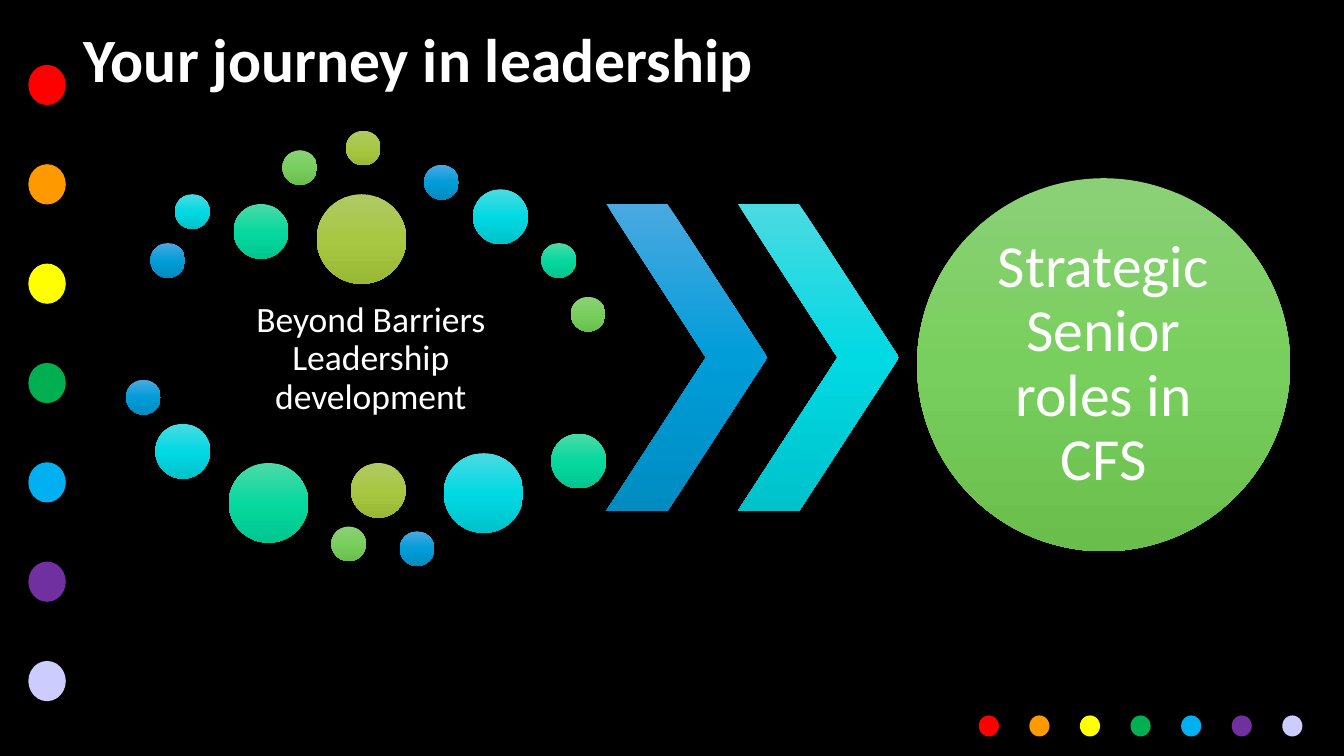
from copy import deepcopy
from dataclasses import dataclass

from pptx import Presentation
from pptx.dml.color import RGBColor
from pptx.enum.shapes import MSO_SHAPE as Shape
from pptx.enum.text import MSO_ANCHOR as Anchor, PP_ALIGN as Align
from pptx.util import Inches, Pt

TITLE = "Your journey in leadership"
PROGRAMME = "Beyond Barriers Leadership development"
DESTINATION = "Strategic Senior roles in CFS"

SLIDE_SIZE = (14.7, 8.27)
GRID_COLUMNS = 275

TITLE_BOX = (15.34, 0, 237.23, 25.44)
PROGRAMME_BOX = (46.77, 58.75, 58.19, 29.56)
DESTINATION_BOX = (187.65, 36.48, 76.33, 76.33)
CHEVRON_BOX = (124.04, 41.72, 32.93, 62.86)
CHEVRON_PITCH = 26.94
CHEVRON_DEPTH = 0.62
SIDE_DOT = (5.8, 13.28, 7.67, 8.23)
SIDE_PITCH = 20.33
FOOTER_DOT = (200.18, 146.5, 4.3, 4.12)
FOOTER_PITCH = 10.35

ORBIT_ORIGIN = (25.8, 26.75)
DIAMETERS = {"S": 7.1, "M": 11.2, "L": 16.3, "XL": 18.35}
ORBIT_DOTS = [
    (5, 23, "S"), (10, 13, "S"), (22, 15, "M"), (32, 4, "S"), (45, 0, "S"),
    (61, 7, "S"), (71, 12, "M"), (85, 23, "S"), (91, 34, "S"), (39, 13, "XL"),
    (0, 51, "S"), (6, 60, "M"), (21, 68, "L"), (42, 81, "S"), (46, 68, "M"),
    (56, 82, "S"), (65, 66, "L"), (87, 62, "M"),
]


@dataclass(frozen=True)
class Theme:
    font: str = "Calibri"
    background: str = "000000"
    text: str = "FFFFFF"
    title_size: float = 48.5
    programme_size: float = 28
    destination_size: float = 47
    rainbow: tuple = ("FF0000", "FF9900", "FFFF00", "00B050", "00B0F0", "7030A0", "CCCCFF")
    blue: tuple = ("4BA8E0", "009DD9", "008CC1")
    cyan: tuple = ("4BDAE2", "01D9E3", "00C2CB")
    teal: tuple = ("4CD9A7", "06D99F", "00C690")
    green: tuple = ("8BD077", "79CF5D", "69BE4C")
    lime: tuple = ("AFC964", "A8C843", "99B935")


THEME = Theme()
ORBIT_COLOURS = (THEME.blue, THEME.cyan, THEME.teal, THEME.green, THEME.lime)


def grid(*modules):
    return [Inches(module * SLIDE_SIZE[0] / GRID_COLUMNS) for module in modules]


def paint_gradient(shape, colours):
    shape.fill.gradient()
    shape.fill.gradient_angle = 270
    first_stop = shape.element.xpath(".//a:gs")[0]
    first_stop.addnext(deepcopy(first_stop))
    for stop, position, colour in zip(shape.fill.gradient_stops, (0, 0.5, 1), colours):
        stop.position = position
        stop.color.rgb = RGBColor.from_string(colour)


def add_figure(slide, kind, box, colour):
    shape = slide.shapes.add_shape(kind, *grid(*box))
    shape.shadow.inherit = False
    shape.line.fill.background()
    if isinstance(colour, tuple):
        paint_gradient(shape, colour)
    else:
        shape.fill.solid()
        shape.fill.fore_color.rgb = RGBColor.from_string(colour)
    return shape


def write(shape, text, size, align, inset=None, bold=False):
    frame = shape.text_frame
    frame.text = text
    frame.word_wrap = True
    frame.vertical_anchor = Anchor.MIDDLE
    if inset is not None:
        frame.margin_left = frame.margin_right = Inches(inset)
        frame.margin_top = frame.margin_bottom = Inches(inset)
    paragraph = frame.paragraphs[0]
    paragraph.alignment = align
    paragraph.line_spacing = 0.9
    font = paragraph.runs[0].font
    font.name, font.size, font.bold = THEME.font, Pt(size), bold
    font.color.rgb = RGBColor.from_string(THEME.text)


def add_rainbows(slide):
    for index, colour in enumerate(THEME.rainbow):
        left, top, width, height = SIDE_DOT
        add_figure(slide, Shape.OVAL, (left, top + index * SIDE_PITCH, width, height), colour)
    for index, colour in enumerate(THEME.rainbow):
        left, top, width, height = FOOTER_DOT
        dot = add_figure(slide, Shape.OVAL, (left + index * FOOTER_PITCH, top, width, height), colour)
        dot.rotation = 270


def add_journey(slide):
    programme = slide.shapes.add_textbox(*grid(*PROGRAMME_BOX))
    write(programme, PROGRAMME, THEME.programme_size, Align.CENTER, inset=0.04)

    for index, (column, row, size) in enumerate(ORBIT_DOTS):
        diameter = DIAMETERS[size]
        box = (ORBIT_ORIGIN[0] + column, ORBIT_ORIGIN[1] + row, diameter, diameter)
        add_figure(slide, Shape.OVAL, box, ORBIT_COLOURS[index % len(ORBIT_COLOURS)])

    left, top, width, height = CHEVRON_BOX
    for index, colours in enumerate((THEME.blue, THEME.cyan)):
        box = (left + index * CHEVRON_PITCH, top, width, height)
        chevron = add_figure(slide, Shape.CHEVRON, box, colours)
        chevron.adjustments[0] = CHEVRON_DEPTH

    destination = add_figure(slide, Shape.OVAL, DESTINATION_BOX, THEME.green)
    write(destination, DESTINATION, THEME.destination_size, Align.CENTER, inset=0)


def main():
    presentation = Presentation()
    presentation.slide_width, presentation.slide_height = map(Inches, SLIDE_SIZE)
    slide = presentation.slides.add_slide(presentation.slide_layouts[6])
    slide.background.fill.solid()
    slide.background.fill.fore_color.rgb = RGBColor.from_string(THEME.background)
    add_rainbows(slide)
    add_journey(slide)
    title = slide.shapes.add_textbox(*grid(*TITLE_BOX))
    write(title, TITLE, THEME.title_size, Align.LEFT, bold=True)
    presentation.save("out.pptx")


if __name__ == "__main__":
    main()
